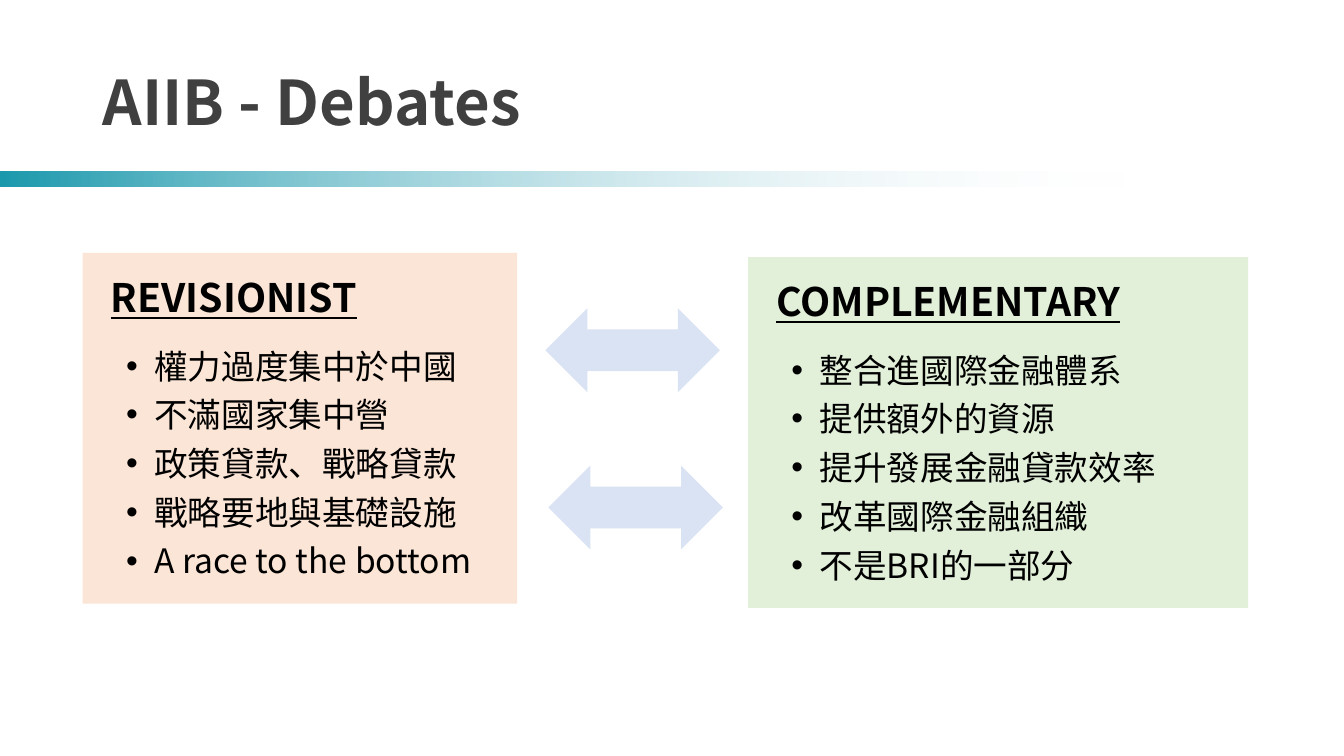
import lxml.etree
import pptx
import pptx.dml.color
import pptx.enum.shapes
import pptx.enum.text
import pptx.oxml.ns
import pptx.util

RGBColor = pptx.dml.color.RGBColor
SHAPES = pptx.enum.shapes.MSO_SHAPE
qn = pptx.oxml.ns.qn

TEAL = RGBColor(0x1B, 0x99, 0xAD)
MIST = RGBColor(0xF6, 0xF8, 0xFC)
GRAY = RGBColor(0x40, 0x40, 0x40)
BLACK = RGBColor(0x00, 0x00, 0x00)
PEACH = RGBColor(0xFB, 0xE5, 0xD6)
GREEN = RGBColor(0xE2, 0xF0, 0xD9)
PALE_BLUE = RGBColor(0xDA, 0xE3, 0xF3)

PANELS = [
    (82, 251, 431, PEACH, "REVISIONIST", [
        "權力過度集中於中國",
        "不滿國家集中營",
        "政策貸款、戰略貸款",
        "戰略要地與基礎設施",
        "A race to the bottom",
    ]),
    (742, 255, 496, GREEN, "COMPLEMENTARY", [
        "整合進國際金融體系",
        "提供額外的資源",
        "提升發展金融貸款效率",
        "改革國際金融組織",
        "不是BRI的一部分",
    ]),
]
ARROWS = [(541, 306), (544, 462)]


def px(length):
    return pptx.util.Emu(length * 9144)


class DebateSlide:
    font_name = "Noto Sans CJK SC"

    def __init__(self, presentation):
        self.slide = presentation.slides.add_slide(presentation.slide_layouts[6])

    def block(self, preset, left, top, width, height, color=None):
        shape = self.slide.shapes.add_shape(preset, px(left), px(top), px(width), px(height))
        shape.shadow.inherit = False
        shape.line.fill.background()
        if color is not None:
            shape.fill.solid()
            shape.fill.fore_color.rgb = color
        return shape

    def fading_bar(self, left, top, width, height):
        shape = self.block(SHAPES.RECTANGLE, left, top, width, height)
        shape.fill.gradient()
        shape.fill.gradient_angle = 0
        for stop, color in zip(shape.fill.gradient_stops, (TEAL, MIST)):
            stop.color.rgb = color
        clear_color = list(shape.element.spPr.iter(qn("a:srgbClr")))[-1]
        lxml.etree.SubElement(clear_color, qn("a:alpha"), val="0")

    def style_text(self, paragraph, text, size, color=BLACK, bold=False, underline=False):
        paragraph.text = text
        paragraph.alignment = pptx.enum.text.PP_ALIGN.LEFT
        for run in paragraph.runs:
            font = run.font
            font.size = pptx.util.Pt(size)
            font.bold = bold
            font.underline = underline
            font.color.rgb = color
            font.name = self.font_name
            lxml.etree.SubElement(run._r.get_or_add_rPr(), qn("a:ea"), typeface=self.font_name)

    def title(self, text, left, top, width, height):
        shape = self.slide.shapes.add_textbox(px(left), px(top), px(width), px(height))
        frame = shape.text_frame
        frame.word_wrap = True
        frame.vertical_anchor = pptx.enum.text.MSO_ANCHOR.MIDDLE
        self.style_text(frame.paragraphs[0], text, 44, GRAY, bold=True)
        frame.paragraphs[0].line_spacing = 0.9

    def bullet(self, paragraph, text):
        properties = paragraph._p.get_or_add_pPr()
        properties.set("marL", str(px(43)))
        properties.set("indent", str(px(-28)))
        lxml.etree.SubElement(properties, qn("a:buFont"), typeface="Arial")
        lxml.etree.SubElement(properties, qn("a:buChar"), char="•")
        self.style_text(paragraph, text, 24)
        paragraph.space_after = pptx.util.Pt(6)

    def panel(self, left, top, width, color, heading, points):
        shape = self.block(SHAPES.RECTANGLE, left, top, width, 348, color)
        frame = shape.text_frame
        frame.word_wrap = True
        frame.auto_size = pptx.enum.text.MSO_AUTO_SIZE.SHAPE_TO_FIT_TEXT
        frame.vertical_anchor = pptx.enum.text.MSO_ANCHOR.TOP
        frame.margin_left = frame.margin_right = px(28)
        frame.margin_top = frame.margin_bottom = px(20)
        self.style_text(frame.paragraphs[0], heading, 28, bold=True, underline=True)
        frame.paragraphs[0].space_after = pptx.util.Pt(18)
        for point in points:
            self.bullet(frame.add_paragraph(), point)

    def arrow(self, left, top):
        self.block(SHAPES.LEFT_RIGHT_ARROW, left, top, 173, 83, PALE_BLUE)


def main():
    presentation = pptx.Presentation()
    presentation.slide_width = px(1333)
    presentation.slide_height = px(750)
    debate = DebateSlide(presentation)
    debate.fading_bar(0, 170, 1120, 15)
    debate.title("AIIB - Debates", 92, 40, 1097, 130)
    for panel in PANELS:
        debate.panel(*panel)
    for left, top in ARROWS:
        debate.arrow(left, top)
    presentation.save("out.pptx")


if __name__ == "__main__":
    main()
